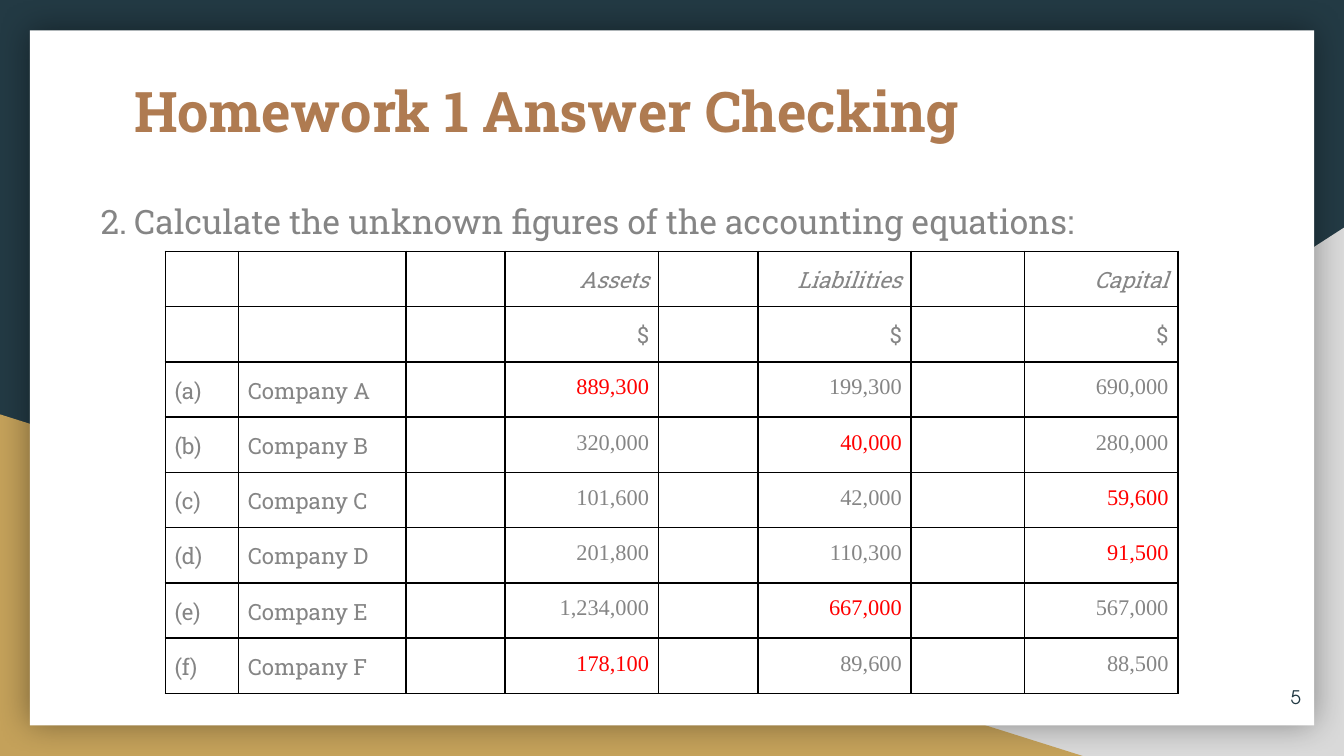
from dataclasses import dataclass

from lxml import etree
from pptx import Presentation
from pptx.dml.color import RGBColor
from pptx.enum.shapes import MSO_SHAPE
from pptx.enum.text import MSO_ANCHOR, PP_ALIGN
from pptx.oxml.ns import qn
from pptx.util import Pt

RECTANGLE = MSO_SHAPE.RECTANGLE
TOP, MIDDLE = MSO_ANCHOR.TOP, MSO_ANCHOR.MIDDLE
LEFT, RIGHT = PP_ALIGN.LEFT, PP_ALIGN.RIGHT

COLORS = {
    "navy": "233A44",
    "silver": "D9D9D9",
    "gold": "C4A15A",
    "white": "FFFFFF",
    "title": "AF7B51",
    "text": "858585",
    "answer": "FF0000",
    "black": "000000",
}
SLAB, SERIF, SANS = "Roboto Slab", "Times New Roman", "TeX Gyre Adventor"
SLIDE_WIDTH, SLIDE_HEIGHT = 720, 405

TABLE_LEFT, TABLE_TOP, ROW_HEIGHT = 88.6, 134.7, 29.62
COLUMN_WIDTHS = [39.2, 89.6, 53.3, 82.1, 53.3, 82.1, 60.8, 82.1]
FIGURE_COLUMNS = [3, 5, 7]
HEADINGS = ["Assets", "Liabilities", "Capital"]
CELL_MARGIN = 5


@dataclass(frozen=True)
class Triangle:
    points: tuple[tuple[float, float], ...]
    color: str


@dataclass(frozen=True)
class Equation:
    label: str
    company: str
    figures: tuple[str, str, str]
    answer_index: int


TRIANGLES = [
    Triangle(((720, 405), (282, 405), (720, 122.3)), "silver"),
    Triangle(((0, 405), (580.3, 405), (0, 222.5)), "gold"),
]
EQUATIONS = [
    Equation("(a)", "Company A", ("889,300", "199,300", "690,000"), 0),
    Equation("(b)", "Company B", ("320,000", "40,000", "280,000"), 1),
    Equation("(c)", "Company C", ("101,600", "42,000", "59,600"), 2),
    Equation("(d)", "Company D", ("201,800", "110,300", "91,500"), 2),
    Equation("(e)", "Company E", ("1,234,000", "667,000", "567,000"), 1),
    Equation("(f)", "Company F", ("178,100", "89,600", "88,500"), 0),
]


def rgb(name: str) -> RGBColor:
    return RGBColor.from_string(COLORS[name])


def add_text(paragraph, text: str, *, size: float = 12, font: str = SLAB,
             color: str = "text", bold: bool = False, italic: bool = False,
             align=LEFT, line_spacing: float = 1.0) -> None:
    paragraph.alignment = align
    paragraph.line_spacing = line_spacing
    run = paragraph.add_run()
    run.text = text
    run.font.size = Pt(size)
    run.font.name = font
    run.font.bold = bold
    run.font.italic = italic
    run.font.color.rgb = rgb(color)


def add_text_box(slide, left: float, top: float, width: float, height: float,
                 *, anchor=TOP, wrap: bool = True):
    shape = slide.shapes.add_textbox(Pt(left), Pt(top), Pt(width), Pt(height))
    frame = shape.text_frame
    frame.word_wrap = wrap
    frame.vertical_anchor = anchor
    frame.margin_left = frame.margin_right = Pt(7.2)
    frame.margin_top = frame.margin_bottom = Pt(7.2)
    return frame.paragraphs[0]


def add_triangle(slide, triangle: Triangle) -> None:
    start, *others = triangle.points
    builder = slide.shapes.build_freeform(*start, scale=Pt(1))
    builder.add_line_segments(others, close=True)
    shape = builder.convert_to_shape()
    shape.shadow.inherit = False
    shape.fill.solid()
    shape.fill.fore_color.rgb = rgb(triangle.color)
    shape.line.fill.background()


def add_panel(slide) -> None:
    shape = slide.shapes.add_shape(RECTANGLE, Pt(16), Pt(16.2), Pt(688), Pt(372.4))
    shape.shadow.inherit = False
    shape.fill.solid()
    shape.fill.fore_color.rgb = rgb("white")
    shape.line.fill.background()
    effects = shape._element.spPr.find(qn("a:effectLst"))
    shadow = etree.SubElement(effects, qn("a:outerShdw"), blurRad=str(Pt(18)), dist="0",
                              dir="0", algn="ctr", rotWithShape="0")
    shade = etree.SubElement(shadow, qn("a:srgbClr"), val=COLORS["black"])
    etree.SubElement(shade, qn("a:alpha"), val="40000")


def style_cell(cell) -> None:
    cell.margin_left = cell.margin_right = Pt(CELL_MARGIN)
    cell.margin_top = cell.margin_bottom = Pt(CELL_MARGIN)
    cell.vertical_anchor = TOP
    properties = cell._tc.get_or_add_tcPr()
    for side in ("lnL", "lnR", "lnT", "lnB"):
        border = etree.SubElement(properties, qn(f"a:{side}"), w=str(Pt(1)))
        fill = etree.SubElement(border, qn("a:solidFill"))
        etree.SubElement(fill, qn("a:srgbClr"), val=COLORS["black"])
    cell.fill.background()
    if not cell.text:
        paragraph = cell.text_frame.paragraphs[0]
        etree.SubElement(paragraph._p, qn("a:endParaRPr"), sz="1200")


def add_equation_table(slide) -> None:
    row_count = len(EQUATIONS) + 2
    frame = slide.shapes.add_table(row_count, len(COLUMN_WIDTHS), Pt(TABLE_LEFT), Pt(TABLE_TOP),
                                   Pt(sum(COLUMN_WIDTHS)), Pt(ROW_HEIGHT * row_count))
    table = frame.table
    table.first_row = False
    table.horz_banding = False
    for column, width in zip(table.columns, COLUMN_WIDTHS):
        column.width = Pt(width)
    for row in table.rows:
        row.height = Pt(ROW_HEIGHT)

    def fill_cell(row: int, column: int, text: str, **text_format) -> None:
        paragraph = table.cell(row, column).text_frame.paragraphs[0]
        add_text(paragraph, text, line_spacing=1.15, **text_format)

    for column, heading in zip(FIGURE_COLUMNS, HEADINGS):
        fill_cell(0, column, heading, italic=True, align=RIGHT)
        fill_cell(1, column, "$", align=RIGHT)
    for row, equation in enumerate(EQUATIONS, start=2):
        fill_cell(row, 0, equation.label)
        fill_cell(row, 1, equation.company)
        for index, (column, figure) in enumerate(zip(FIGURE_COLUMNS, equation.figures)):
            color = "answer" if index == equation.answer_index else "text"
            fill_cell(row, column, figure, font=SERIF, color=color, align=RIGHT)
    for cell in table.iter_cells():
        style_cell(cell)


def add_question(slide) -> None:
    paragraph = add_text_box(slide, 46.8, 97.2, 635, 39.6, anchor=MIDDLE)
    properties = paragraph._p.get_or_add_pPr()
    properties.set("marL", str(Pt(18)))
    properties.set("indent", str(-Pt(18)))
    question = "Calculate the unknown figures of the accounting equations:"
    for text, size in (("2.", 18), (" \t", 13), (question, 18)):
        add_text(paragraph, text, size=size, line_spacing=1.15)


def main() -> None:
    presentation = Presentation()
    presentation.slide_width = Pt(SLIDE_WIDTH)
    presentation.slide_height = Pt(SLIDE_HEIGHT)
    slide = presentation.slides.add_slide(presentation.slide_layouts[6])
    slide.background.fill.solid()
    slide.background.fill.fore_color.rgb = rgb("navy")
    for triangle in TRIANGLES:
        add_triangle(slide, triangle)
    add_panel(slide)
    title = add_text_box(slide, 64.8, 33.8, 591, 57.6)
    add_text(title, "Homework 1 Answer Checking", size=30, color="title", bold=True)
    add_equation_table(slide)
    add_question(slide)
    number = add_text_box(slide, 677.5, 360, 26.6, 26.6, anchor=MIDDLE, wrap=False)
    add_text(number, "5", size=10, font=SANS, color="navy", align=RIGHT)
    presentation.save("out.pptx")


if __name__ == "__main__":
    main()
